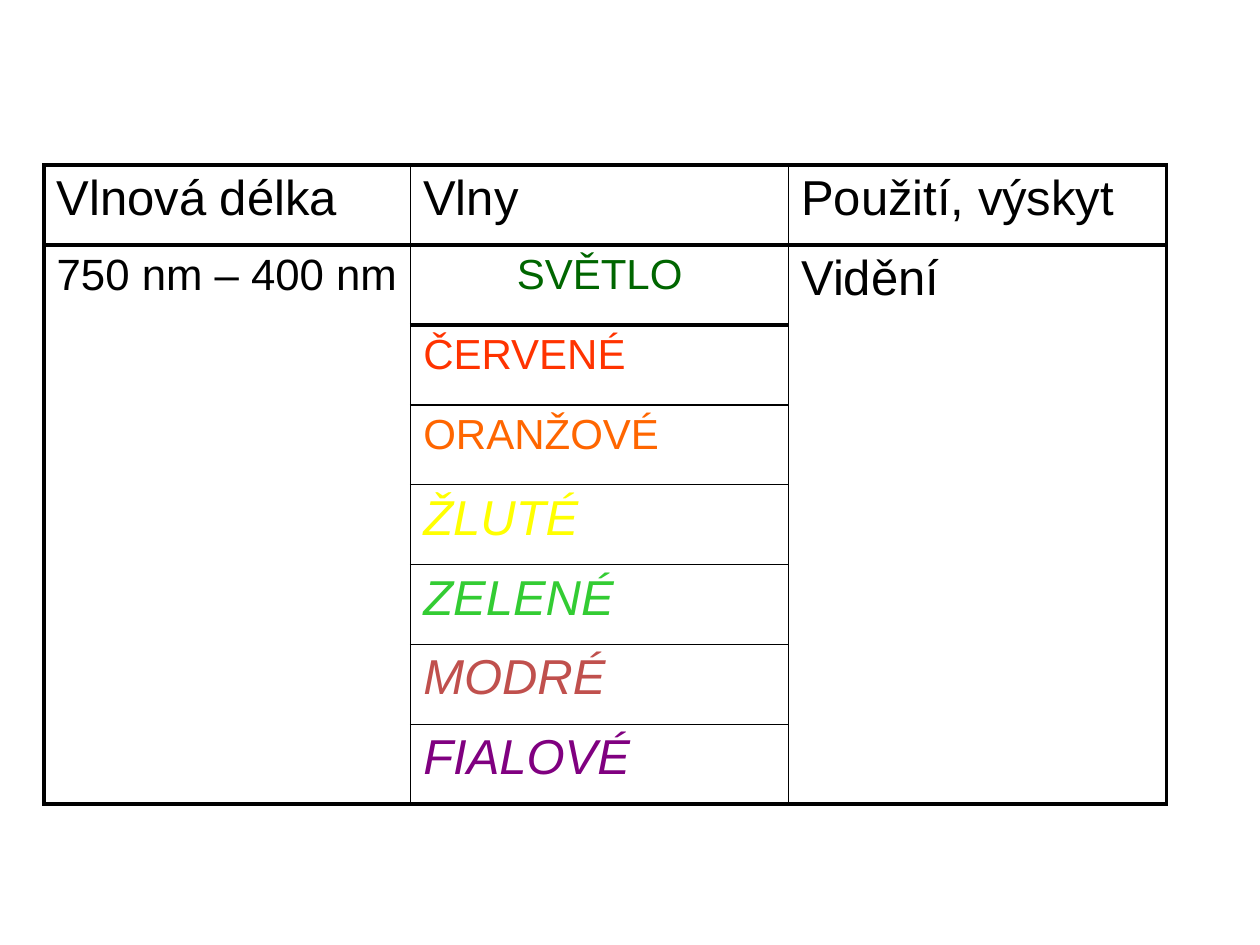
from dataclasses import dataclass

from lxml import etree
from pptx import Presentation
from pptx.dml.color import RGBColor
from pptx.enum.text import PP_ALIGN
from pptx.oxml.ns import qn
from pptx.util import Cm, Pt

LEFT, CENTER = PP_ALIGN.LEFT, PP_ALIGN.CENTER

COLORS = {
    "black": "000000", "dark_green": "006600", "red": "FF3300",
    "orange": "FF6600", "yellow": "FFFF00", "green": "33CC33",
    "brick": "C0504D", "purple": "800080",
}
THIN, FRAME, THICK = 0.96, 2.21, 3
COL_WIDTHS = (7.39, 7.62, 7.62)
ROW_HEIGHT, ROWS = 1.61, 8
COL_EDGES = (FRAME, THIN, THIN, FRAME)
ROW_EDGES = (FRAME, THICK, THICK) + (THIN,) * 5 + (FRAME,)
MERGED_COLS = (0, 2)


@dataclass
class Entry:
    row: int
    col: int
    text: str
    size: float = 28
    color: str = "black"
    italic: bool = False
    align: PP_ALIGN = LEFT


ENTRIES = (
    Entry(0, 0, "Vlnová délka"),
    Entry(0, 1, "Vlny"),
    Entry(0, 2, "Použití, výskyt"),
    Entry(1, 0, "750 nm – 400 nm", 25),
    Entry(1, 1, "SVĚTLO", 24, "dark_green", align=CENTER),
    Entry(1, 2, "Vidění"),
    Entry(2, 1, "ČERVENÉ", 24, "red"),
    Entry(3, 1, "ORANŽOVÉ", 24, "orange"),
    Entry(4, 1, "ŽLUTÉ", color="yellow", italic=True),
    Entry(5, 1, "ZELENÉ", color="green", italic=True),
    Entry(6, 1, "MODRÉ", color="brick", italic=True),
    Entry(7, 1, "FIALOVÉ", color="purple", italic=True),
)


def set_borders(cell, sides: dict[str, float]) -> None:
    """Put border lines, in schema order, ahead of the cell's fill."""
    tc_pr = cell._tc.get_or_add_tcPr()
    for i, (side, width) in enumerate(sides.items()):
        ln = etree.Element(qn(f"a:ln{side}"), w=str(int(Pt(width))))
        fill = etree.SubElement(ln, qn("a:solidFill"))
        etree.SubElement(fill, qn("a:srgbClr"), val=COLORS["black"])
        tc_pr.insert(i, ln)


def style_cell(table, row: int, col: int) -> None:
    cell = table.cell(row, col)
    cell.fill.background()
    sides = {"L": COL_EDGES[col], "R": COL_EDGES[col + 1]}
    merged = col in MERGED_COLS and row > 0
    # Merged cells have no lines between their rows
    if not merged or row == 1:
        sides["T"] = ROW_EDGES[row]
    if merged:
        if row in (1, ROWS - 1):
            sides["B"] = ROW_EDGES[ROWS]
    else:
        sides["B"] = ROW_EDGES[row + 1]
    set_borders(cell, sides)


def write_entry(table, entry: Entry) -> None:
    p = table.cell(entry.row, entry.col).text_frame.paragraphs[0]
    p.alignment = entry.align
    p.space_before = Pt(entry.size * 0.2)
    r = p.add_run()
    r.text = entry.text
    r.font.name = "Arial"
    r.font.size = Pt(entry.size)
    r.font.italic = entry.italic
    r.font.color.rgb = RGBColor.from_string(COLORS[entry.color])


def main() -> None:
    prs = Presentation()
    prs.slide_width, prs.slide_height = Cm(25.4), Cm(19.05)
    s = prs.slides.add_slide(prs.slide_layouts[6])

    # Table of light wavelengths
    table = s.shapes.add_table(
        ROWS, len(COL_WIDTHS), Cm(0.89), Cm(3.33),
        Cm(sum(COL_WIDTHS)), Cm(ROW_HEIGHT * ROWS)).table
    table.first_row = table.horz_banding = False
    for column, width in zip(table.columns, COL_WIDTHS):
        column.width = Cm(width)
    for row in table.rows:
        row.height = Cm(ROW_HEIGHT)

    # Wavelength and use each span all the colours
    for col in MERGED_COLS:
        table.cell(1, col).merge(table.cell(ROWS - 1, col))
    for row in range(ROWS):
        for col in range(len(COL_WIDTHS)):
            style_cell(table, row, col)
    for entry in ENTRIES:
        write_entry(table, entry)

    prs.save("out.pptx")


if __name__ == "__main__":
    main()
